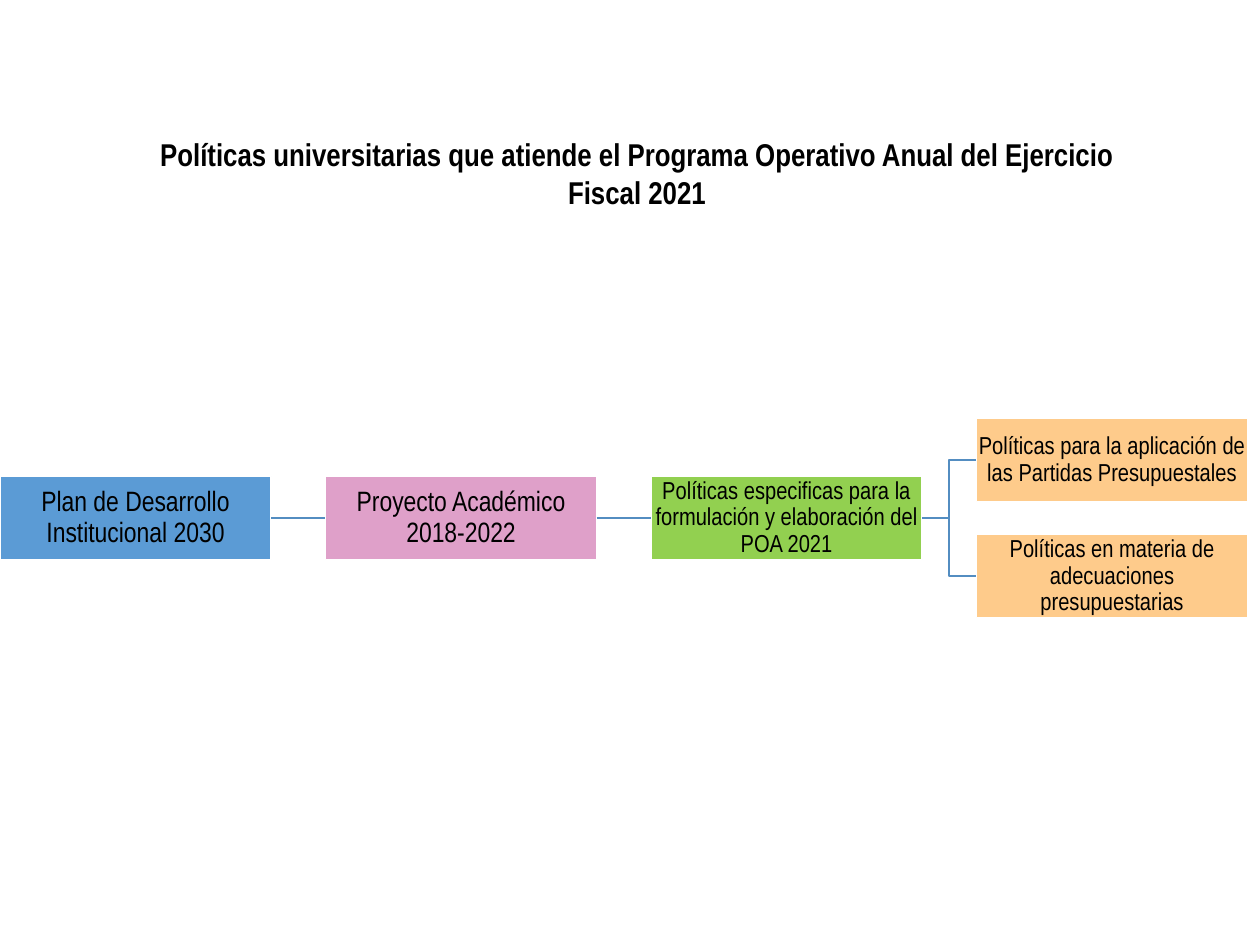
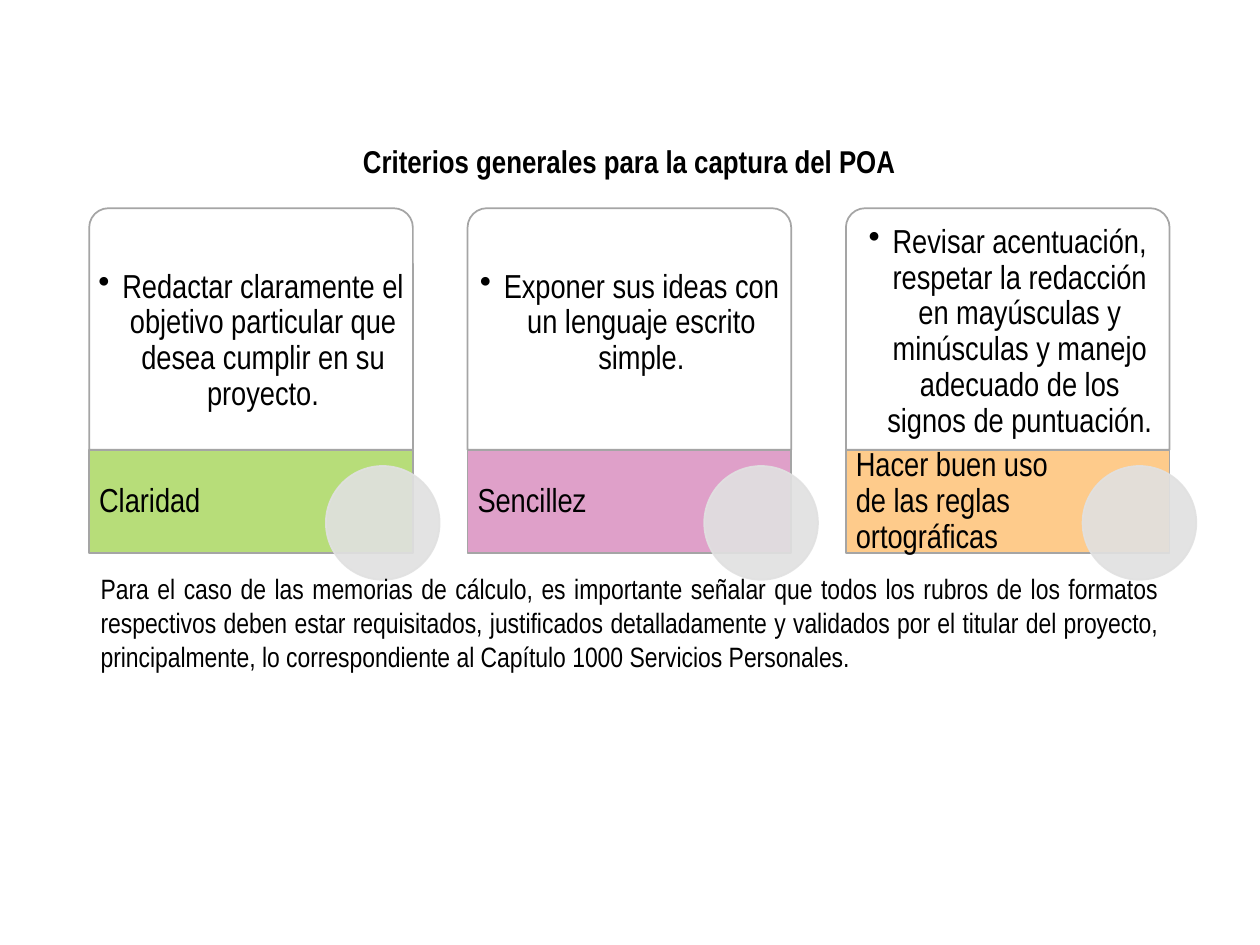
from pptx import Presentation
from pptx.dml.color import RGBColor
from pptx.enum.shapes import MSO_CONNECTOR as Link, MSO_SHAPE as Form
from pptx.enum.text import MSO_ANCHOR as Anchor, MSO_AUTO_SIZE as AutoSize, PP_ALIGN as Align
from pptx.oxml.ns import qn
from pptx.util import Pt
from lxml import etree

FONT = "Arial Narrow"
COLORS = {
    "text": "000000", "white": "FFFFFF", "link": "538DC1", "plan": "5B9BD5",
    "pink": "DFA0C9", "policy": "92D050", "orange": "FECB8B",
    "clarity": "B7DD79", "border": "A5A5A5", "circle": "E1E1E1",
}
RIGHT_SIDE, LEFT_SIDE = 3, 1

# Flow of policies: column, vertical centre, fill, text size, wording
MIDDLE, BRANCH = 296, 33.2
FLOW = [
    (0, MIDDLE, "plan", 16, "Plan de Desarrollo Institucional 2030"),
    (1, MIDDLE, "pink", 16, "Proyecto Académico 2018-2022"),
    (2, MIDDLE, "policy", 14,
     "Políticas especificas para la formulación y elaboración del POA 2021"),
    (3, MIDDLE - BRANCH, "orange", 14,
     "Políticas para la aplicación de las Partidas Presupuestales"),
    (3, MIDDLE + BRANCH, "orange", 14,
     "Políticas en materia de adecuaciones presupuestarias"),
]
FLOW_LINKS = [(0, 1, Link.STRAIGHT), (1, 2, Link.STRAIGHT),
              (2, 3, Link.ELBOW), (2, 4, Link.ELBOW)]

# Criteria: label, label fill, top inset of the advice, advice
CRITERIA = [
    ("Claridad", "clarity", 31.7,
     "Redactar claramente el objetivo particular que desea cumplir en su proyecto."),
    ("Sencillez", "pink", 31.7, "Exponer sus ideas con un lenguaje escrito simple."),
    ("Hacer buen uso de las reglas ortográficas", "orange", 6,
     "Revisar acentuación, respetar la redacción en mayúsculas y minúsculas "
     "y manejo adecuado de los signos de puntuación."),
]
NOTE = ("Para el caso de las memorias de cálculo, es importante señalar que todos los "
        "rubros de los formatos respectivos deben estar requisitados, justificados "
        "detalladamente y validados por el titular del proyecto, principalmente, lo "
        "correspondiente al Capítulo 1000 Servicios Personales.")


def color(name):
    return RGBColor.from_string(COLORS[name])


def apply(target, formats):
    for name, value in formats.items():
        setattr(target, name, value)


def place(shape, left, top, width, height):
    apply(shape, {"left": Pt(left), "top": Pt(top), "width": Pt(width), "height": Pt(height)})


def write(shape, text, size, align=Align.CENTER, anchor=Anchor.MIDDLE,
          insets=(7.2, 3.6, 7.2, 3.6), spacing=1.0, bold=False, bullet=False):
    """Fill a shape with one paragraph; insets run left, top, right, bottom."""
    frame = shape.text_frame
    sides = ("margin_left", "margin_top", "margin_right", "margin_bottom")
    apply(frame, dict(zip(sides, map(Pt, insets))))
    apply(frame, {"word_wrap": True, "auto_size": AutoSize.NONE, "vertical_anchor": anchor})
    para = frame.paragraphs[0]
    if bullet:
        properties = para._p.get_or_add_pPr()
        properties.set("marL", str(Pt(13.7)))
        properties.set("indent", str(-Pt(13.7)))
        etree.SubElement(properties, qn("a:buChar"), char="•")
    apply(para, {"alignment": align, "line_spacing": spacing})
    span = para.add_run()
    span.text = text
    apply(span.font, {"name": FONT, "size": Pt(size), "bold": bold})
    span.font.color.rgb = color("text")


def add_titled_page(deck, title, area):
    page = deck.slides.add_slide(deck.slide_layouts[5])
    place(page.shapes.title, *area)
    write(page.shapes.title, title, 18, anchor=Anchor.TOP, bold=True)
    return page


def add_box(page, form, area, fill, line):
    box = page.shapes.add_shape(form, *map(Pt, area))
    box.shadow.inherit = False
    box.fill.solid()
    box.fill.fore_color.rgb = color(fill)
    box.line.color.rgb = color(line)
    box.line.width = Pt(1)
    return box


def make_translucent(box, percent):
    for tint in box._element.spPr.iter(qn("a:srgbClr")):
        etree.SubElement(tint, qn("a:alpha"), val=str(percent * 1000))


def link_boxes(page, source, target, kind):
    link = page.shapes.add_connector(kind, 0, 0, 0, 0)
    link.begin_connect(source, RIGHT_SIDE)
    link.end_connect(target, LEFT_SIDE)
    link.line.color.rgb = color("link")
    link.line.width = Pt(1)
    etree.SubElement(link._element.spPr, qn("a:effectLst"))


def add_flow(page):
    width, height, step = 155, 47.5, 186
    boxes = []
    for column, centre, fill, size, text in FLOW:
        area = (column * step, centre - height / 2, width, height)
        box = add_box(page, Form.RECTANGLE, area, fill, "white")
        write(box, text, size, insets=(0.7,) * 4, spacing=0.9)
        boxes.append(box)
    for source, target, kind in FLOW_LINKS:
        link_boxes(page, boxes[source], boxes[target], kind)


def add_criterion(page, left, label, fill, top_inset, advice):
    width, label_top = 185, 257
    # Advice card
    card = add_box(page, Form.ROUND_2_SAME_RECTANGLE,
                   (left, 119, width, label_top - 119), "white", "border")
    card.adjustments[0] = 0.08
    make_translucent(card, 100)
    write(card, advice, 19, anchor=Anchor.TOP, insets=(2, top_inset, 2, 2),
          spacing=0.9, bullet=True)
    # Label band, its text kept clear of the circle
    band = add_box(page, Form.RECTANGLE, (left, label_top, width, 59), fill, "border")
    write(band, label, 19, Align.LEFT, insets=(5.7, 0, 57, 0), spacing=0.9)
    # Circle over the corner of the band
    circle = add_box(page, Form.OVAL, (left + 135.2, 266.3, 65, 65), "circle", "circle")
    make_translucent(circle, 90)


def main():
    deck = Presentation()
    apply(deck, {"slide_width": Pt(720), "slide_height": Pt(540)})

    # Policies
    page = add_titled_page(
        deck, "Políticas universitarias que atiende el Programa Operativo Anual "
        "del Ejercicio Fiscal 2021", (77.8, 73.4, 572.4, 51))
    add_flow(page)

    # Criteria
    page = add_titled_page(deck, "Criterios generales para la captura del POA",
                           (19.4, 77.8, 680.4, 29))
    for index, criterion in enumerate(CRITERIA):
        add_criterion(page, 51 + 216.2 * index, *criterion)
    note = page.shapes.add_textbox(*map(Pt, (50.4, 323.3, 619.2, 65.5)))
    write(note, NOTE, 16, Align.JUSTIFY, Anchor.TOP)

    deck.save("out.pptx")


if __name__ == "__main__":
    main()
